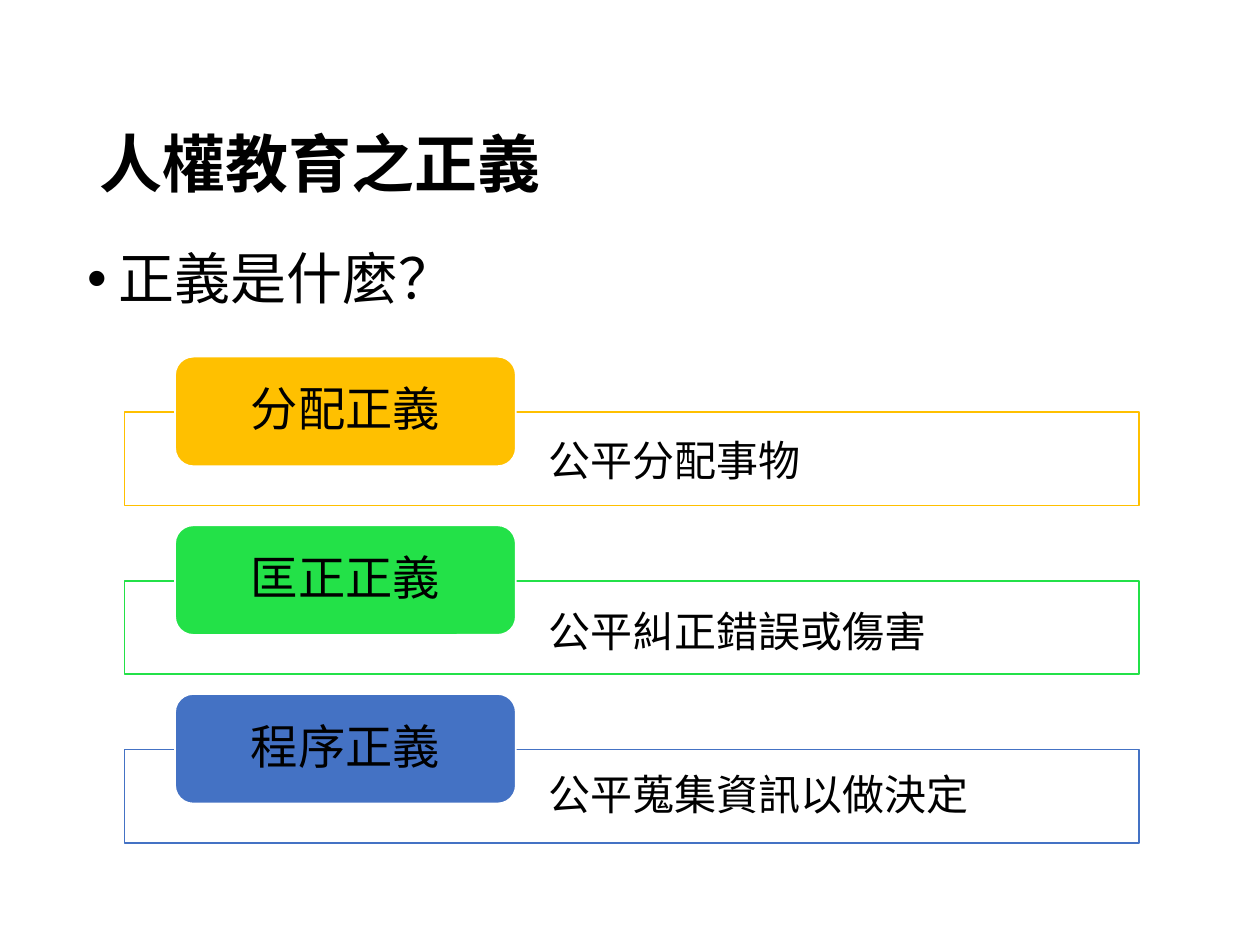
from dataclasses import dataclass

from lxml import etree
from pptx import Presentation
from pptx.dml.color import RGBColor
from pptx.enum.shapes import MSO_SHAPE
from pptx.enum.text import MSO_ANCHOR, MSO_AUTO_SIZE, PP_ALIGN
from pptx.oxml.ns import qn
from pptx.util import Cm, Pt

RECT, ROUND = MSO_SHAPE.RECTANGLE, MSO_SHAPE.ROUNDED_RECTANGLE
TOP, MIDDLE = MSO_ANCHOR.TOP, MSO_ANCHOR.MIDDLE
LEFT, CENTER = PP_ALIGN.LEFT, PP_ALIGN.CENTER
FIXED, GROW = MSO_AUTO_SIZE.NONE, MSO_AUTO_SIZE.SHAPE_TO_FIT_TEXT

STEP = 3.4  # cm from one row to the next
ROWS = [  # label, colour, note, top of note
    ("分配正義", "gold", "公平分配事物", 8.64),
    ("匡正正義", "green", "公平糾正錯誤或傷害", 12.09),
    ("程序正義", "blue", "公平蒐集資訊以做決定", 15.37),
]


@dataclass(frozen=True)
class Theme:
    face: str = "Noto Sans CJK SC"
    ink: str = "000000"
    paper: str = "FFFFFF"
    gold: str = "FFC000"
    green: str = "23E148"
    blue: str = "4472C4"
    title: int = 36
    body: int = 32
    label: int = 27
    note: int = 24


class Deck:
    def __init__(self, theme):
        self.theme = theme
        self.file = Presentation()
        self.file.slide_width, self.file.slide_height = Cm(25.4), Cm(19.05)
        self.slide = self.file.slides.add_slide(self.file.slide_layouts[1])

    def place(self, shape, *box):
        for name, size in zip(("left", "top", "width", "height"), box):
            setattr(shape, name, Cm(size))

    def fill_text(self, shape, text, size, bold=False, align=LEFT, space=0.9, **frame):
        """Put one styled paragraph in the shape; frame holds text frame settings."""
        look = {"word_wrap": True, "auto_size": FIXED, **frame}
        for name, value in look.items():
            setattr(shape.text_frame, name, value)
        para = shape.text_frame.paragraphs[0]
        lines = {"alignment": align, "line_spacing": space, "space_before": Pt(0)}
        for name, value in lines.items():
            setattr(para, name, value)
        run = para.add_run()
        run.text = text
        style = {"name": self.theme.face, "size": Pt(size), "bold": bold}
        for name, value in style.items():
            setattr(run.font, name, value)
        run.font.color.rgb = RGBColor.from_string(self.theme.ink)
        asian = etree.SubElement(run._r.get_or_add_rPr(), qn("a:ea"))
        asian.set("typeface", self.theme.face)
        return para

    def title(self, text, *box):
        shape = self.slide.shapes.title
        self.place(shape, *box)
        self.fill_text(shape, text, self.theme.title, bold=True, vertical_anchor=MIDDLE)

    def bullet(self, text, *box):
        shape = self.slide.placeholders[1]
        self.place(shape, *box)
        para = self.fill_text(shape, text, self.theme.body, vertical_anchor=TOP)
        props = para._p.get_or_add_pPr()
        props.set("marL", str(Cm(0.64)))
        props.set("indent", str(-Cm(0.64)))
        etree.SubElement(props, qn("a:buChar")).set("char", "•")

    def block(self, kind, fill, line, *box):
        shape = self.slide.shapes.add_shape(kind, *map(Cm, box))
        shape.shadow.inherit = False
        shape.fill.solid()
        shape.fill.fore_color.rgb = RGBColor.from_string(fill)
        shape.line.color.rgb = RGBColor.from_string(line)
        shape.line.width = Pt(1)
        return shape

    def frame(self, line, *box):
        shape = self.block(RECT, self.theme.paper, line, *box)
        color = shape.fill._xPr.find(qn("a:solidFill"))[0]
        etree.SubElement(color, qn("a:alpha")).set("val", "90000")

    def label(self, text, fill, *box):
        shape = self.block(ROUND, fill, self.theme.paper, *box)
        self.fill_text(shape, text, self.theme.label, align=CENTER,
                       vertical_anchor=MIDDLE, margin_top=0, margin_bottom=0)

    def note(self, text, *box):
        shape = self.slide.shapes.add_textbox(*map(Cm, box))
        self.fill_text(shape, text, self.theme.note, space=1.0, auto_size=GROW)


def main():
    theme = Theme()
    deck = Deck(theme)
    deck.title("人權教育之正義", 1.75, 1.02, 21.9, 4.7)
    deck.bullet("正義是什麼？", 1.5, 4.93, 21.9, 12.09)
    for i, (label, color, note, top) in enumerate(ROWS):
        tint, drop = getattr(theme, color), i * STEP
        deck.frame(tint, 2.51, 8.31 + drop, 20.45, 1.88)
        deck.label(label, tint, 3.53, 7.19 + drop, 6.87, 2.21)
        deck.note(note, 10.8, top, 12.4, 1.27)
    deck.file.save("out.pptx")


if __name__ == "__main__":
    main()
